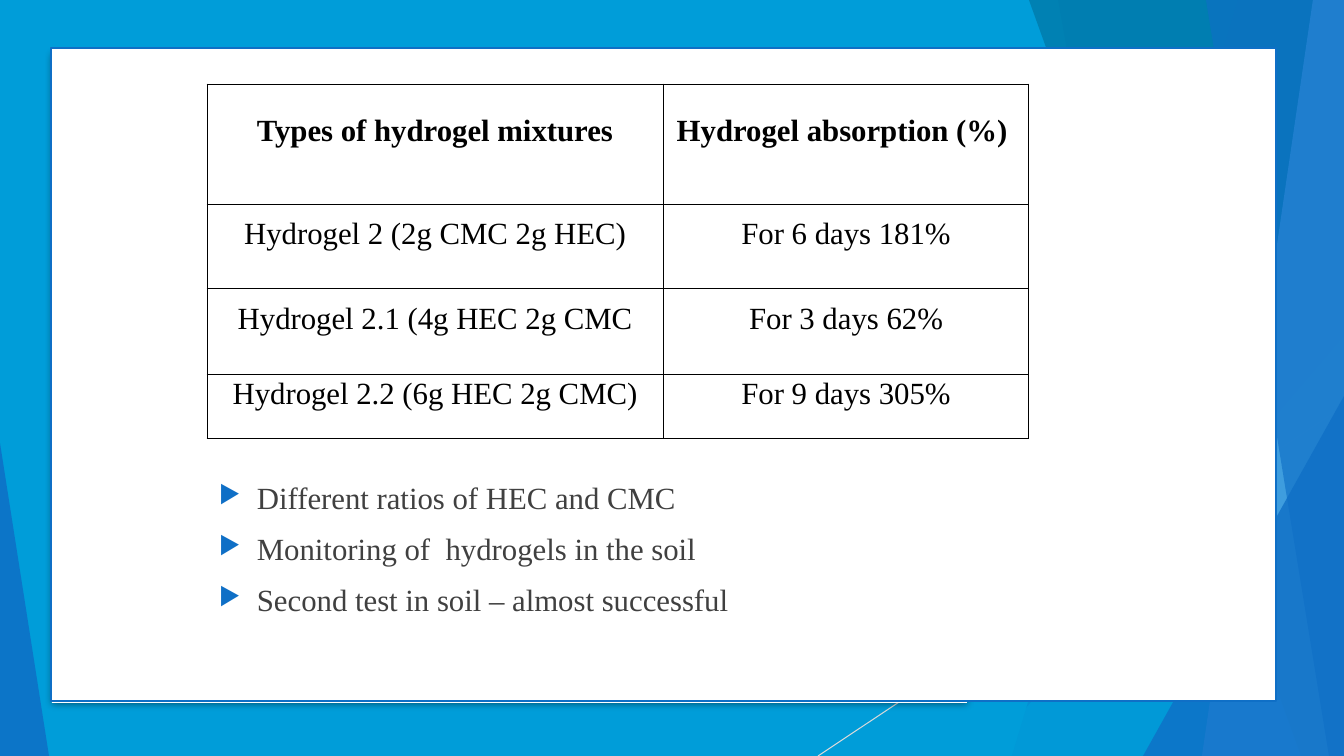
from dataclasses import dataclass
from typing import Any

from lxml import etree
from pptx import Presentation
from pptx.dml.color import RGBColor
from pptx.enum import shapes, text
from pptx.oxml import ns
from pptx import util as u

EMU_PER_PX = 914400 / 100.8
WIDTH, HEIGHT = 1344, 756

WHITE = RGBColor(0xFF, 0xFF, 0xFF)
BLACK = RGBColor(0x00, 0x00, 0x00)
GREY = RGBColor(0x40, 0x40, 0x40)
PALE = RGBColor(0xD9, 0xD9, 0xD9)
BLUE = RGBColor(0x0F, 0x6F, 0xC6)
CYAN = RGBColor(0x00, 0x9D, 0xD9)
TEAL = RGBColor(0x00, 0x76, 0xA3)
SKY = RGBColor(0x59, 0xAA, 0xF2)

ABSORPTION = [
    ("Types of hydrogel mixtures", "Hydrogel absorption (%) "),
    ("Hydrogel 2 (2g CMC 2g HEC)", "For 6 days 181%"),
    ("Hydrogel 2.1 (4g HEC 2g CMC", "For 3 days 62%"),
    ("Hydrogel 2.2 (6g HEC 2g CMC)", "For 9 days 305%"),
]
FINDINGS = [
    "Different ratios of HEC and CMC",
    "Monitoring of  hydrogels in the soil",
    "Second test in soil – almost successful",
]


def px(*lengths):
    return [u.Emu(round(length * EMU_PER_PX)) for length in lengths]


def add(parent, tag, **attributes):
    child = etree.SubElement(parent, ns.qn(tag))
    for name, value in attributes.items():
        child.set(name, str(value))
    return child


@dataclass
class Painter:
    page: Any
    font: str = "Times New Roman"
    size: int = 22

    def paint(self, shape, color, opacity=100):
        shape.shadow.inherit = False
        shape.fill.solid()
        shape.fill.fore_color.rgb = color
        shape.line.fill.background()
        if opacity < 100:
            tint = shape._element.spPr.find(ns.qn("a:solidFill"))[0]
            add(tint, "a:alpha", val=opacity * 1000)
        return shape

    def rectangle(self, place, color):
        shape = self.page.shapes.add_shape(shapes.MSO_SHAPE.RECTANGLE, *px(*place))
        return self.paint(shape, color)

    def triangle(self, place, apex, color, opacity):
        shape = self.page.shapes.add_shape(
            shapes.MSO_SHAPE.ISOSCELES_TRIANGLE, *px(*place))
        shape.adjustments[0] = apex
        self.paint(shape, color, opacity)

    def band(self, top, bottom, color, opacity):
        outline = self.page.shapes.build_freeform(top, 0, EMU_PER_PX)
        outline.add_line_segments([(WIDTH, 0), (WIDTH, HEIGHT), (bottom, HEIGHT)])
        self.paint(outline.convert_to_shape(), color, opacity)

    def line(self, ends, color):
        line = self.page.shapes.add_connector(
            shapes.MSO_CONNECTOR.STRAIGHT, *px(*ends))
        line.line.color.rgb = color
        line.line.width = u.Pt(0.75)
        add(line._element.spPr, "a:effectLst")

    def drop_shadow(self, shape):
        effects = shape._element.spPr.find(ns.qn("a:effectLst"))
        shadow = add(effects, "a:outerShdw", blurRad=u.Pt(5), dist=u.Pt(1.4),
                     dir=90 * 60000, rotWithShape=0)
        add(add(shadow, "a:srgbClr", val=BLACK), "a:alpha", val=43000)

    def label(self, paragraph, words, color, bold=False):
        paragraph.text = words
        font = paragraph.font
        font.name, font.size, font.bold = self.font, u.Pt(self.size), bold
        font.color.rgb = color

    def borders(self, cell):
        properties = cell._tc.get_or_add_tcPr()
        for side in ("a:lnL", "a:lnR", "a:lnT", "a:lnB"):
            border = add(properties, side, w=u.Pt(0.75))
            add(add(border, "a:solidFill"), "a:srgbClr", val=BLACK)

    def table(self, left, top, widths, heights, rows):
        frame = self.page.shapes.add_table(
            len(rows), len(widths), *px(left, top, sum(widths), sum(heights)))
        table = frame.table
        table.first_row = table.horz_banding = False
        for column, width in zip(table.columns, px(*widths)):
            column.width = width
        for index, (height, entries) in enumerate(zip(px(*heights), rows)):
            table.rows[index].height = height
            for cell, words in zip(table.rows[index].cells, entries):
                self.borders(cell)
                cell.fill.background()
                cell.margin_left, cell.margin_right = px(4, 4)
                cell.margin_top, cell.margin_bottom = px(3, 3)
                cell.vertical_anchor = text.MSO_ANCHOR.MIDDLE
                paragraph = cell.text_frame.paragraphs[0]
                paragraph.alignment = text.PP_ALIGN.CENTER
                paragraph.line_spacing = u.Pt(6.5)
                self.label(paragraph, words, BLACK, bold=index == 0)

    def bullets(self, place, items):
        frame = self.page.shapes.add_textbox(*px(*place)).text_frame
        frame.word_wrap = True
        indent = px(38)[0]
        for index, words in enumerate(items):
            paragraph = frame.add_paragraph() if index else frame.paragraphs[0]
            self.label(paragraph, words, GREY)
            paragraph.space_before = u.Pt(10)
            properties = paragraph._p.get_or_add_pPr()
            properties.set("marL", str(indent))
            properties.set("indent", str(-indent))
            marks = etree.Element("marks")
            add(add(marks, "a:buClr"), "a:srgbClr", val=BLUE)
            add(marks, "a:buSzPct", val=80000)
            add(marks, "a:buChar", char="▶")
            spacing = properties.find(ns.qn("a:spcBef"))
            for mark in reversed(list(marks)):
                spacing.addnext(mark)


def main():
    deck = Presentation()
    deck.slide_width, deck.slide_height = px(WIDTH, HEIGHT)
    painter = Painter(deck.slides.add_slide(deck.slide_layouts[6]))

    painter.rectangle((0, 0, WIDTH, HEIGHT), CYAN)
    painter.line((WIDTH, 406, 818, HEIGHT), PALE)
    painter.band(1238, 1012, BLUE, 30)
    painter.band(1058, 1192, BLUE, 20)
    painter.triangle((985, 336, 359, 420), 1, CYAN, 72)
    painter.band(1029, 1301, TEAL, 70)
    painter.band(1313, 1202, SKY, 70)
    painter.band(1206, 1329, BLUE, 65)
    painter.triangle((1143, 396, 201, 360), 1, BLUE, 80)
    painter.triangle((0, 443, 49, 313), 0, BLUE, 85)

    backing = painter.rectangle((52, 53, 915, 650), WHITE)
    painter.drop_shadow(backing)
    card = painter.rectangle((51, 48, 1225, 653), WHITE)
    card.line.color.rgb = BLUE
    card.line.width = u.Pt(1.5)

    painter.table(207, 84, (456, 366), (120, 85, 86, 64), ABSORPTION)
    painter.bullets((209, 474, 847, 193), FINDINGS)
    deck.save("out.pptx")


if __name__ == "__main__":
    main()
